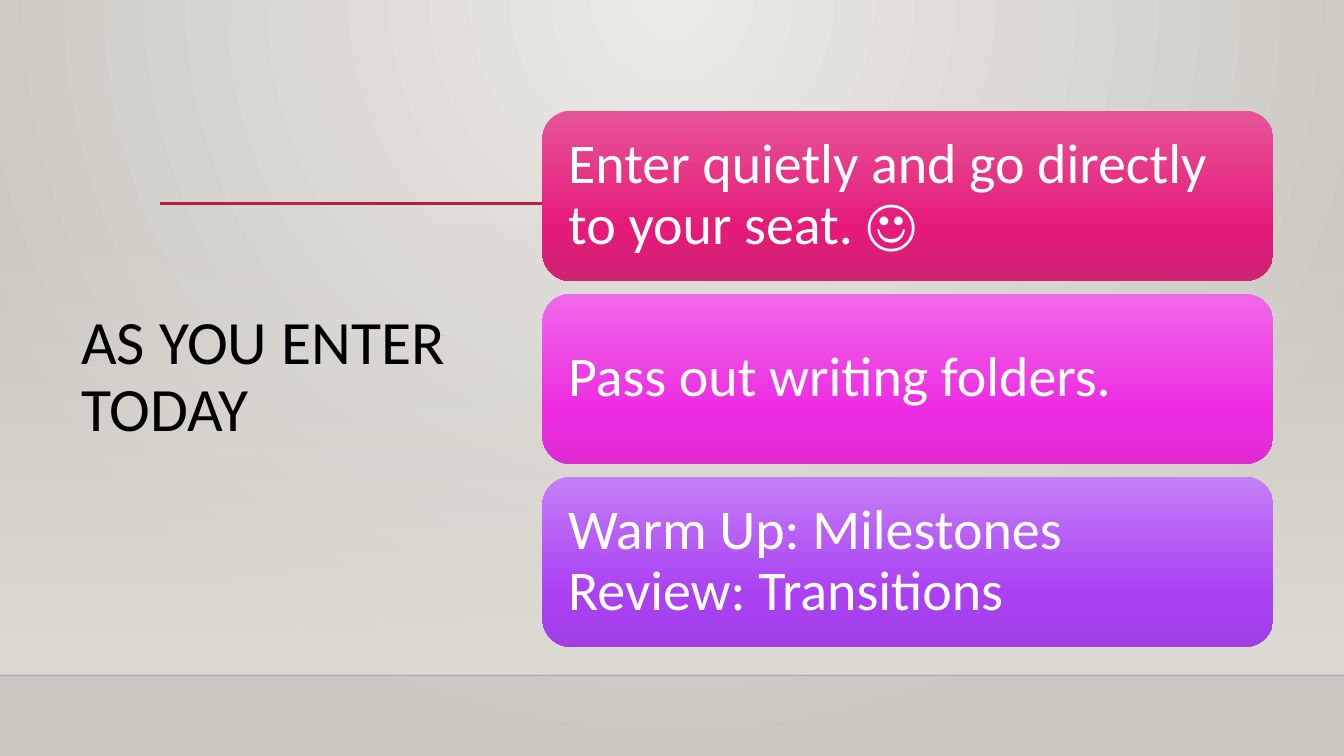
from lxml.etree import SubElement
from pptx import Presentation
from pptx.dml.color import RGBColor
from pptx.enum.shapes import MSO_CONNECTOR, MSO_SHAPE
from pptx.enum.text import MSO_ANCHOR, PP_ALIGN
from pptx.oxml.ns import qn
from pptx.util import Cm, Pt

WIDE, HIGH = 33.87, 19.05
FLOOR = 17.02  # height of the floor line

# Card text with its gradient stops (percent, colour, opacity)
CARDS = [
    ("Enter quietly and go directly to your seat. ☺",
     [(0, "E75597", 100), (69, "E51A79", 100), (100, "CF2374", 100)]),
    ("Pass out writing folders.",
     [(0, "F068E8", 100), (69, "ED2CE2", 100), (100, "E02BD5", 100)]),
    ("Warm Up: Milestones Review: Transitions",
     [(0, "C57FF7", 100), (69, "AA41F3", 100), (100, "A13FE5", 100)]),
]


def tint(color, code):
    color.rgb = RGBColor.from_string(code)


def fade(node, alpha):
    if alpha < 100:
        SubElement(node, qn("a:alpha"), val=str(alpha * 1000))


def blend(fill, props, stops, round_rect=None):
    """Fill with a gradient: top to bottom, or circular around a rectangle."""
    fill.solid()
    old = props.find(qn("a:solidFill"))
    grad = SubElement(props, qn("a:gradFill"), rotWithShape="1")
    props.replace(old, grad)
    group = SubElement(grad, qn("a:gsLst"))
    for pos, code, alpha in stops:
        stop = SubElement(group, qn("a:gs"), pos=str(pos * 1000))
        fade(SubElement(stop, qn("a:srgbClr"), val=code), alpha)
    if round_rect:
        path = SubElement(grad, qn("a:path"), {"path": "circle"})
        SubElement(path, qn("a:fillToRect"), round_rect)
    else:
        SubElement(grad, qn("a:lin"), ang="5400000", scaled="0")


def backdrop(slide):
    fill = slide.background.fill
    fill.solid()
    props = slide.element.find(".//" + qn("p:bgPr"))
    blend(fill, props, [(0, "ECEAE7", 100), (100, "CAC7C1", 100)],
          {"l": "43000", "t": "0", "r": "43000", "b": "100000"})


def block(slide, kind, left, top, width, height, stops):
    shape = slide.shapes.add_shape(kind, Cm(left), Cm(top), Cm(width), Cm(height))
    shape.shadow.inherit = False
    shape.line.fill.background()
    blend(shape.fill, shape.element.spPr, stops)
    return shape


def rule(slide, start, end, top, code, width, alpha=100):
    line = slide.shapes.add_connector(
        MSO_CONNECTOR.STRAIGHT, Cm(start), Cm(top), Cm(end), Cm(top))
    tint(line.line.color, code)
    line.line.width = Pt(width)
    props = line._element.spPr
    fade(props.find(".//" + qn("a:srgbClr")), alpha)
    SubElement(props, qn("a:effectLst"))


def write(shape, text, size, code, inset):
    frame = shape.text_frame
    frame.text = text
    look = {"word_wrap": True, "vertical_anchor": MSO_ANCHOR.MIDDLE}
    for side in ("left", "right", "top", "bottom"):
        look["margin_" + side] = Cm(inset)
    para = frame.paragraphs[0]
    flow = {"alignment": PP_ALIGN.LEFT, "line_spacing": 0.9, "space_before": Pt(0)}
    font = para.runs[0].font
    face = {"name": "Calibri", "size": Pt(size)}
    for part, form in ((frame, look), (para, flow), (font, face)):
        for key, value in form.items():
            setattr(part, key, value)
    tint(font.color, code)


def heading(slide, text):
    title = slide.shapes.title
    place = {"left": 1.8, "top": 3.84, "width": 9.86, "height": 11.38}
    for key, value in place.items():
        setattr(title, key, Cm(value))
    write(title, text, 44, "000000", 0.25)
    slide.shapes.element.append(title.element)  # in front of the haze


def main():
    deck = Presentation()
    deck.slide_width, deck.slide_height = Cm(WIDE), Cm(HIGH)
    slide = deck.slides.add_slide(deck.slide_layouts[5])

    # Wall, floor line and accent line
    backdrop(slide)
    block(slide, MSO_SHAPE.RECTANGLE, 0, 5.61, WIDE, FLOOR - 5.61,
          [(0, "DFDBD5", 0), (100, "DFDBD5", 100)])
    rule(slide, 0, WIDE, FLOOR, "000001", 1, 20)
    rule(slide, 4.04, 30.73, 5.13, "B71E42", 2.5)

    # Title
    heading(slide, "AS YOU ENTER TODAY")

    # Cards at an equal pitch
    for row, (text, stops) in enumerate(CARDS):
        card = block(slide, MSO_SHAPE.ROUNDED_RECTANGLE,
                     13.67, 2.79 + row * 4.61, 18.42, 4.29, stops)
        write(card, text, 40, "FFFFFF", 0.44)

    deck.save("out.pptx")


if __name__ == "__main__":
    main()
